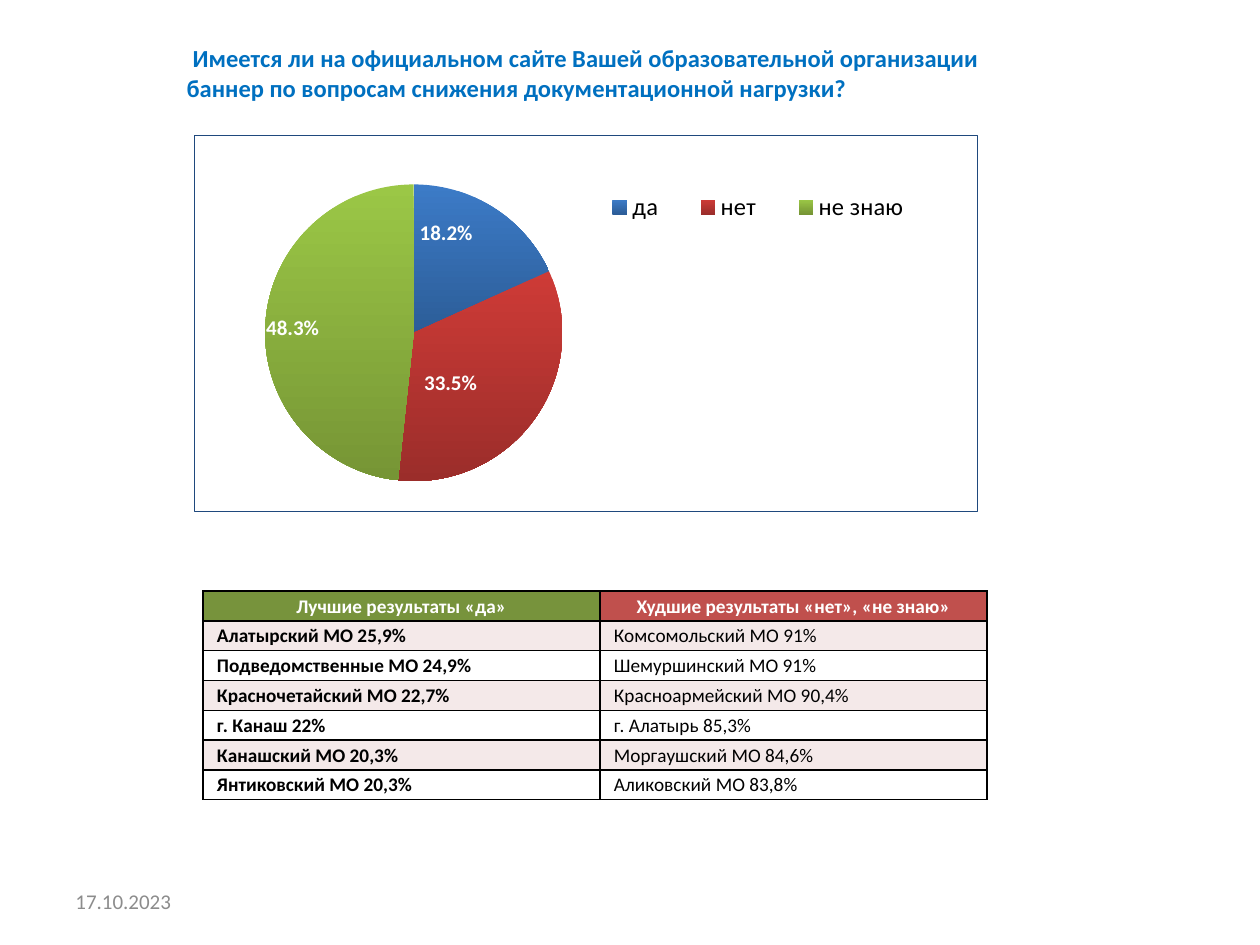
from dataclasses import dataclass

from lxml import etree
from pptx import Presentation
from pptx import util as u
from pptx.chart import data
from pptx.dml.color import RGBColor
from pptx.enum import chart as ch
from pptx.enum import text as t
from pptx.oxml import parse_xml
from pptx.oxml.ns import nsdecls, qn


@dataclass(frozen=True)
class Theme:
    font: str = "Calibri"
    head: str = "0070C0"
    ink: str = "000000"
    pale: str = "FFFFFF"
    mute: str = "8C8C8C"
    frame: str = "1F497D"
    good: str = "77933C"
    bad: str = "C0504D"
    band: str = "F4E9E9"
    pie: tuple = (("3C7BC7", "2C5D98"), ("CE3B37", "9B2D2A"), ("9BC746", "769535"))
    title: int = 14
    key: int = 14
    label: int = 12
    date: int = 12
    cell: int = 11


def px(n):
    return u.Emu(round(n * 914400 / 126))


def rgb(code):
    return RGBColor.from_string(code)


def place(x, y, w=None, h=None):
    size = "" if w is None else f'<c:w val="{w}"/><c:h val="{h}"/>'
    modes = "" if w is None else '<c:xMode val="edge"/><c:yMode val="edge"/>'
    return parse_xml(
        f'<c:layout {nsdecls("c")}><c:manualLayout>{modes}'
        f'<c:x val="{x}"/><c:y val="{y}"/>{size}</c:manualLayout></c:layout>')


class Deck:
    def __init__(self, theme):
        self.theme = theme
        self.prs = Presentation()
        self.prs.slide_width, self.prs.slide_height = px(1260), px(945)
        self.slide = self.prs.slides.add_slide(self.prs.slide_layouts[1])

    def style(self, font, size, color, bold=False):
        font.name, font.size, font.bold = self.theme.font, u.Pt(size), bold
        font.color.rgb = rgb(color)

    def run(self, para, words, size, color, bold=False):
        run = para.add_run()
        run.text = words
        self.style(run.font, size, color, bold)

    def title(self, box, words):
        top, body = self.slide.placeholders
        top.element.getparent().remove(top.element)
        body.left, body.top, body.width, body.height = map(px, box)
        body.text_frame.auto_size = t.MSO_AUTO_SIZE.NONE
        para = body.text_frame.paragraphs[0]
        props = para._p.get_or_add_pPr()
        props.set("marL", "0")
        props.set("indent", str(px(6)))
        etree.SubElement(props, qn("a:buNone"))
        self.run(para, words, self.theme.title, self.theme.head, True)

    def note(self, box, words):
        frame = self.slide.shapes.add_textbox(*map(px, box)).text_frame
        frame.word_wrap = True
        frame.vertical_anchor = t.MSO_ANCHOR.MIDDLE
        self.run(frame.paragraphs[0], words, self.theme.date, self.theme.mute)

    def pie(self, box, names, values, shifts):
        look = self.theme
        feed = data.CategoryChartData(number_format="0.0%")
        feed.categories = names
        feed.add_series("Series 1", values)
        chart = self.slide.shapes.add_chart(
            ch.XL_CHART_TYPE.PIE, *map(px, box), feed).chart
        chart.has_title = False
        self.style(chart.font, 18, look.ink)
        chart._chartSpace.find(qn("c:chart")).addnext(parse_xml(
            f'<c:spPr {nsdecls("c", "a")}><a:noFill/><a:ln w="9525"><a:solidFill>'
            f'<a:srgbClr val="{look.frame}"/></a:solidFill></a:ln></c:spPr>'))

        chart.has_legend = True
        key = chart.legend
        key.position = ch.XL_LEGEND_POSITION.TOP
        key.include_in_layout = False
        self.style(key.font, look.key, look.ink)
        for old in key._element.findall(qn("c:layout")):
            key._element.remove(old)
        key._element.find(qn("c:legendPos")).addnext(place(0.49, 0.13, 0.46, 0.12))

        area = chart._chartSpace.find(".//" + qn("c:plotArea"))
        for old in area.findall(qn("c:layout")):
            area.remove(old)
        inner = place(0.09, 0.13, 0.38, 0.79)
        inner[0].insert(0, parse_xml(
            f'<c:layoutTarget {nsdecls("c")} val="inner"/>'))
        area.insert(0, inner)

        plot = chart.plots[0]
        plot.vary_by_categories = True
        plot.has_data_labels = True
        tags = plot.data_labels
        tags.show_value, tags.show_percentage = True, False
        tags.number_format, tags.number_format_is_linked = "0.0%", False
        self.style(tags.font, look.label, look.pale, True)
        for i, (pair, shift) in enumerate(zip(look.pie, shifts)):
            point = plot.series[0].points[i]
            fill = point.format.fill
            fill.gradient()
            fill.gradient_angle = 270
            for stop, code in zip(fill.gradient_stops, pair):
                stop.color.rgb = rgb(code)
            tag = point.data_label
            self.style(tag.font, look.label, look.pale, True)
            tag.position = ch.XL_LABEL_POSITION.CENTER
            node = tag._get_or_add_dLbl()
            node.insert(1, place(*shift))
            node.insert(2, parse_xml(
                f'<c:numFmt {nsdecls("c")} formatCode="0.0%" sourceLinked="0"/>'))

    def edge(self, cell):
        props = cell._tc.get_or_add_tcPr()
        for i, side in enumerate(("lnL", "lnR", "lnT", "lnB")):
            props.insert(i, parse_xml(
                f'<a:{side} {nsdecls("a")} w="12700"><a:solidFill>'
                f'<a:srgbClr val="{self.theme.ink}"/></a:solidFill></a:{side}>'))

    def table(self, box, widths, rows):
        look = self.theme
        grid = self.slide.shapes.add_table(
            len(rows), len(widths), *map(px, box)).table
        grid.horz_banding = False
        for col, width in zip(grid.columns, widths):
            col.width = px(width)
        for r, row in enumerate(rows):
            for c, words in enumerate(row):
                cell = grid.cell(r, c)
                head = r == 0
                cell.margin_left = px(9 if head else 14)
                cell.margin_right = px(9)
                cell.margin_top = cell.margin_bottom = 0
                cell.fill.solid()
                back = (look.good, look.bad)[c] if head else (look.pale, look.band)[r % 2]
                cell.fill.fore_color.rgb = rgb(back)
                self.edge(cell)
                para = cell.text_frame.paragraphs[0]
                para.line_spacing = 1.15
                para.alignment = t.PP_ALIGN.CENTER if head else t.PP_ALIGN.LEFT
                self.run(para, words, look.cell,
                         look.pale if head else look.ink, head or c == 0)


def main():
    deck = Deck(Theme())
    deck.title((174, 37, 883, 118),
               "Имеется ли на официальном сайте Вашей образовательной организации "
               "баннер по вопросам снижения документационной нагрузки?")
    deck.note((63, 876, 294, 50), "17.10.2023")
    deck.pie((194, 135, 784, 377), ("да", "нет", "не знаю"),
             (0.182, 0.335, 0.483), ((-0.01, -0.1), (-0.03, 0.02), (-0.06, 0)))
    deck.table((203, 591, 784, 209), (397, 387), (
        ("Лучшие результаты «да»", "Худшие результаты «нет», «не знаю»"),
        ("Алатырский МО 25,9%", "Комсомольский МО 91%"),
        ("Подведомственные МО 24,9%", "Шемуршинский МО 91%"),
        ("Красночетайский МО 22,7%", "Красноармейский МО 90,4%"),
        ("г. Канаш 22%", "г. Алатырь 85,3%"),
        ("Канашский МО 20,3%", "Моргаушский МО 84,6%"),
        ("Янтиковский МО 20,3%", "Аликовский МО 83,8%"),
    ))
    deck.prs.save("out.pptx")


if __name__ == "__main__":
    main()
